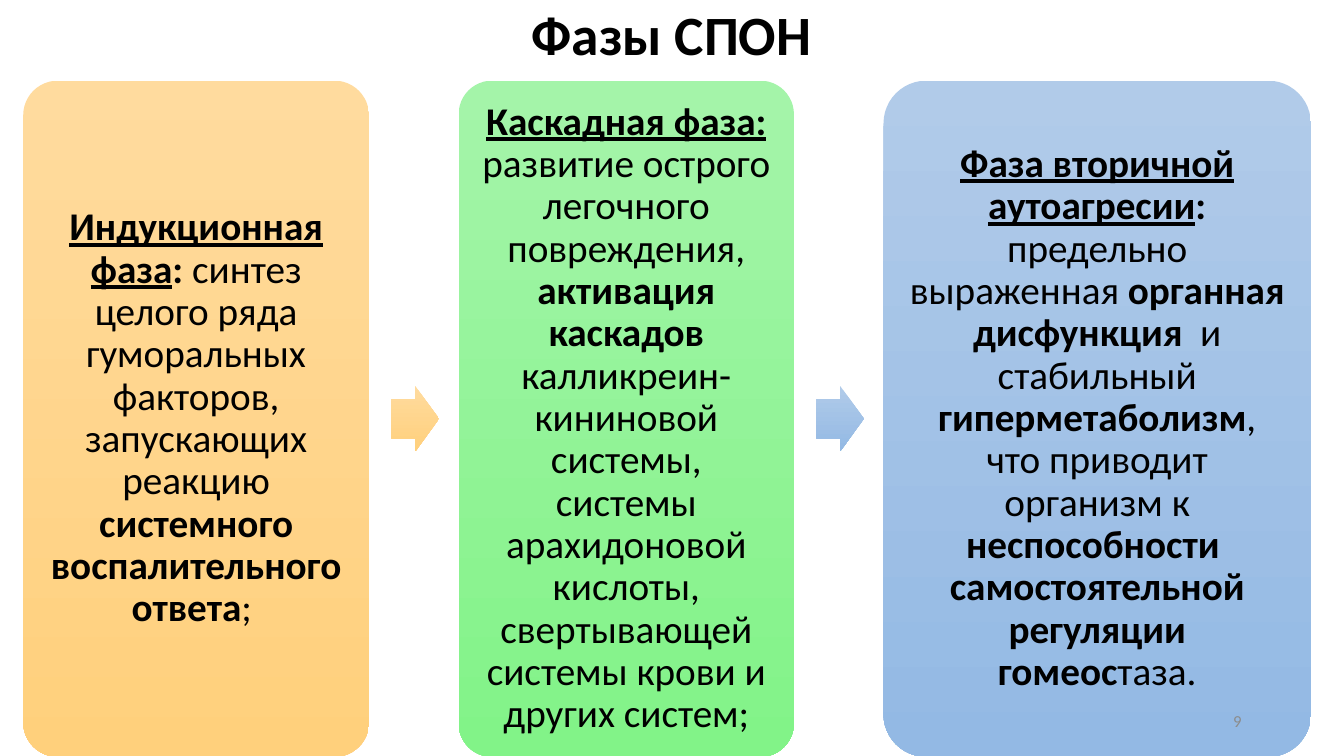
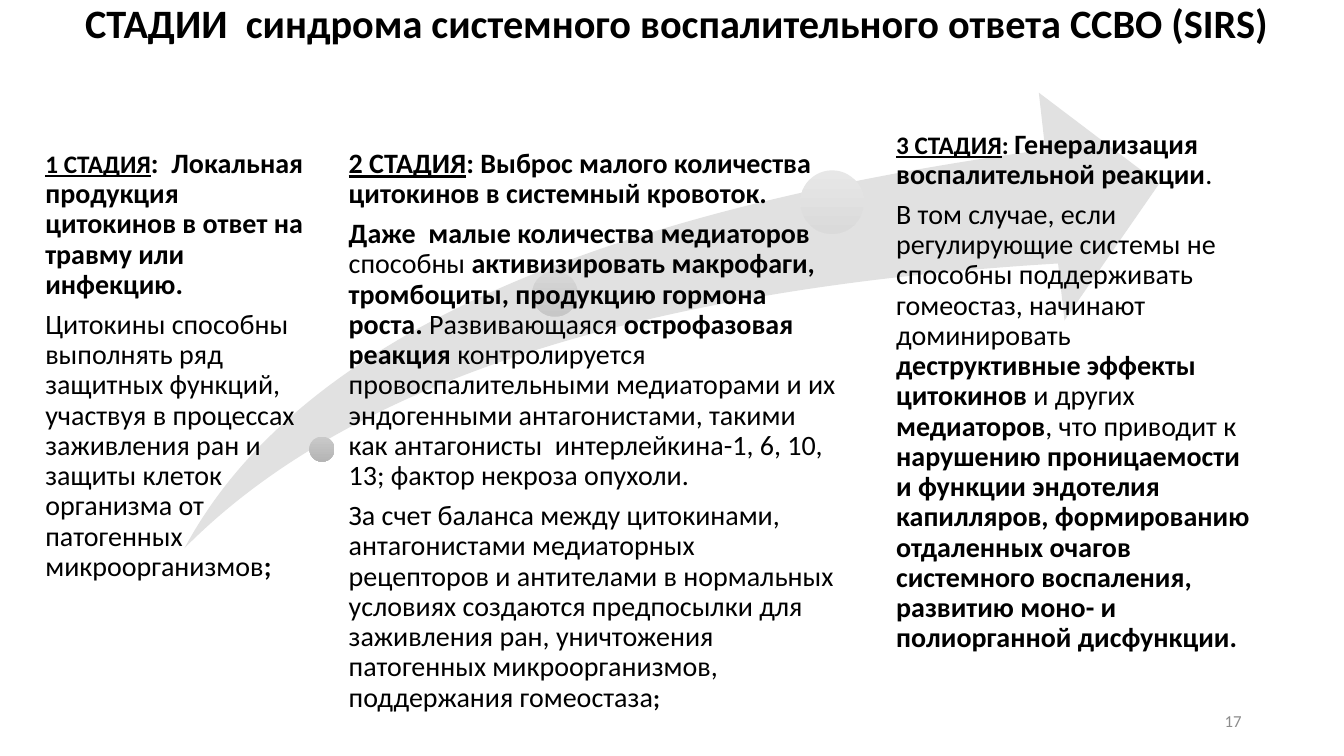
"""Build two slides on the phases and stages of the systemic inflammatory response."""
from dataclasses import dataclass

from pptx import Presentation
from pptx import util as u
from pptx.dml.color import RGBColor
from pptx.enum import shapes, text

Pt = u.Pt
Shape = shapes.MSO_SHAPE
Align = text.PP_ALIGN
Anchor = text.MSO_ANCHOR


@dataclass(frozen=True)
class Theme:
    font: str = "Calibri"
    ink: str = "000000"
    muted: str = "8C8C8C"
    swoosh: str = "E1E1E1"
    orange: tuple[str, str] = ("FFDB9E", "FFD07C")
    green: tuple[str, str] = ("A4F4A9", "82F388")
    blue: tuple[str, str] = ("B1CBE9", "93B9E4")
    grays: tuple[tuple[str, str], ...] = (
        ("C9C9C9", "B5B5B5"), ("D7D7D7", "C7C7C7"), ("E7E7E7", "DADADA"))
    phase_title: float = 39.6
    stage_title: float = 28.8
    phase_text: float = 28
    stage_text: float = 20
    stage_small: float = 18
    number: float = 12
    line_spacing: float = 0.9
    after: float = 0.35


THEME = Theme()


@dataclass(frozen=True)
class Box:
    left: float
    top: float
    width: float
    height: float

    def lengths(self) -> tuple:
        return Pt(self.left), Pt(self.top), Pt(self.width), Pt(self.height)


@dataclass(frozen=True)
class Run:
    text: str
    bold: bool = False
    underline: bool = False
    size: float | None = None


@dataclass(frozen=True)
class Phase:
    width: float
    colors: tuple[str, str]
    runs: list[Run]


@dataclass(frozen=True)
class Stage:
    dot: Box
    box: Box
    inset: float
    paragraphs: list[list[Run]]


PHASES = [
    Phase(247, THEME.orange, [
        Run("Индукционная фаза", True, True),
        Run(": ", True),
        Run("синтез целого ряда гуморальных факторов, запускающих реакцию "),
        Run("системного воспалительного ответа", True),
        Run("; "),
    ]),
    Phase(239.5, THEME.green, [
        Run("Каскадная фаза: ", True, True),
        Run("развитие острого легочного повреждения, "),
        Run("активация каскадов ", True),
        Run("калликреин-кининовой системы, системы арахидоновой кислоты, "
            "свертывающей системы крови и других систем;"),
    ]),
    Phase(305.3, THEME.blue, [
        Run("Фаза вторичной аутоагресии", True, True),
        Run(": ", True),
        Run("предельно выраженная "),
        Run("органная дисфункция", True),
        Run("  и стабильный "),
        Run("гиперметаболизм", True),
        Run(", что приводит организм к "),
        Run("неспособности  самостоятельной регуляции гомеос", True),
        Run("таза."),
    ]),
]

STAGES = [
    Stage(Box(221, 311.8, 18, 18), Box(23, 106.6, 197.3, 393), 9.4, [
        [
            Run("1 СТАДИЯ", True, True, THEME.stage_small),
            Run(":  Локальная продукция цитокинов в ответ на травму или инфекцию.", True),
        ],
        [
            Run("Цитокины способны выполнять ряд защитных функций, участвуя в процессах "
                "заживления ран и защиты клеток организма от патогенных микроорганизмов"),
            Run(";", True),
        ],
    ]),
    Stage(Box(380.2, 193.7, 32.4, 32.4), Box(231.8, 106.6, 366.5, 433.4), 17.3, [
        [
            Run("2 СТАДИЯ", True, True),
            Run(": Выброс малого количества цитокинов в системный кровоток.", True),
        ],
        [
            Run("Даже  малые количества медиаторов ", True),
            Run("способны "),
            Run("активизировать макрофаги, тромбоциты, продукцию гормона роста. ", True),
            Run("Развивающаяся "),
            Run("острофазовая реакция", True),
            Run(" контролируется провоспалительными медиаторами и их эндогенными "
                "антагонистами, такими как антагонисты  интерлейкина-1, 6, 10, 13; "
                "фактор некроза опухоли."),
        ],
        [
            Run("За счет баланса между цитокинами, антагонистами медиаторных рецепторов "
                "и антителами в нормальных условиях создаются предпосылки для заживления "
                "ран, уничтожения патогенных микроорганизмов, поддержания гомеостаза"),
            Run(";", True, size=THEME.stage_small),
        ],
    ]),
    Stage(Box(571.7, 121.7, 45.4, 45.4), Box(616.3, 92.9, 281.5, 404), 23.8, [
        [
            Run("3 СТАДИЯ", True, True, THEME.stage_small),
            Run(": ", True, size=THEME.stage_small),
            Run("Генерализация воспалительной реакции", True),
            Run("."),
        ],
        [
            Run("В том случае, если регулирующие системы не способны поддерживать "
                "гомеостаз, начинают доминировать "),
            Run("деструктивные эффекты цитокинов ", True),
            Run("и других "),
            Run("медиаторов", True),
            Run(", что приводит к "),
            Run("нарушению проницаемости и функции эндотелия капилляров, формированию "
                "отдаленных очагов системного воспаления, развитию моно- и "
                "полиорганной дисфункции.", True),
        ],
    ]),
]


def write(tf, paragraphs: list[list[Run]], size: float, color: str = THEME.ink,
          align=Align.LEFT, anchor=Anchor.TOP, spacing: float = THEME.line_spacing,
          insets: tuple[float, float, float, float] = (7.2, 3.6, 7.2, 3.6)) -> None:
    """Fill a text frame run by run."""
    tf.word_wrap = True
    tf.auto_size = text.MSO_AUTO_SIZE.NONE
    tf.vertical_anchor = anchor
    tf.margin_left, tf.margin_top, tf.margin_right, tf.margin_bottom = map(Pt, insets)
    for i, runs in enumerate(paragraphs):
        p = tf.add_paragraph() if i else tf.paragraphs[0]
        p.alignment = align
        p.line_spacing = spacing
        p.space_before = Pt(0)
        if len(paragraphs) > 1:
            p.space_after = Pt(size * THEME.after)
        for run in runs:
            r = p.add_run()
            r.text = run.text
            r.font.name = THEME.font
            r.font.size = Pt(run.size or size)
            r.font.bold = run.bold
            r.font.underline = run.underline
            r.font.color.rgb = RGBColor.from_string(color)


def add_shape(slide, kind, box: Box, colors: tuple[str, ...],
              adjustments: tuple[float, ...] = ()):
    """Draw a borderless shape with a solid or top-to-bottom gradient fill."""
    sp = slide.shapes.add_shape(kind, *box.lengths())
    sp.shadow.inherit = False
    sp.line.fill.background()
    for i, value in enumerate(adjustments):
        sp.adjustments[i] = value
    if len(colors) == 1:
        sp.fill.solid()
        sp.fill.fore_color.rgb = RGBColor.from_string(colors[0])
    else:
        sp.fill.gradient()
        sp.fill.gradient_angle = 270
        for stop, color in zip(sp.fill.gradient_stops, colors):
            stop.color.rgb = RGBColor.from_string(color)
    return sp


def add_text(slide, box: Box, paragraphs: list[list[Run]], size: float, **style) -> None:
    """Add a text box with formatted paragraphs."""
    write(slide.shapes.add_textbox(*box.lengths()).text_frame, paragraphs, size, **style)


def add_slide(prs, title: str, box: Box, size: float):
    """Add a title-only slide and format its title."""
    slide = prs.slides.add_slide(prs.slide_layouts[5])
    sp = slide.shapes.title
    sp.left, sp.top, sp.width, sp.height = box.lengths()
    write(sp.text_frame, [[Run(title, True)]], size,
          align=Align.CENTER, anchor=Anchor.MIDDLE)
    return slide


def add_number(slide, number: int) -> None:
    """Write the page number at the lower right."""
    add_text(slide, Box(678, 500.5, 216, 28.8), [[Run(str(number))]], THEME.number,
             color=THEME.muted, align=Align.RIGHT, anchor=Anchor.MIDDLE, spacing=1.0)


def build_phases(prs) -> None:
    """Draw three phase cards joined by block arrows."""
    slide = add_slide(prs, "Фазы СПОН", Box(59, 0, 841.7, 54), THEME.phase_title)
    top, height = 57.6, 483
    arrow_width, arrow_height = 34, 46.8
    gap_before, gap_after = 16, 14
    left = 16.6
    arrow_colors = (THEME.orange, THEME.blue)
    for i, phase in enumerate(PHASES):
        if i:
            left += gap_before
            arrow_top = top + (height - arrow_height) / 2
            add_shape(slide, Shape.RIGHT_ARROW,
                      Box(left, arrow_top, arrow_width, arrow_height),
                      arrow_colors[i - 1], (0.6, 0.5))
            left += arrow_width + gap_after
        card = add_shape(slide, Shape.ROUNDED_RECTANGLE,
                         Box(left, top, phase.width, height), phase.colors, (0.1,))
        write(card.text_frame, [phase.runs], THEME.phase_text, align=Align.CENTER,
              anchor=Anchor.MIDDLE, insets=(8.4,) * 4)
        left += phase.width
    add_number(slide, 9)


def build_stages(prs) -> None:
    """Draw three stages along a rising swoosh arrow."""
    slide = add_slide(prs, "СТАДИИ  синдрома системного воспалительного ответа ССВО (SIRS)",
                      Box(32.4, 0, 902.2, 36), THEME.stage_title)
    add_shape(slide, Shape.SWOOSH_ARROW, Box(131.8, 66.2, 696.2, 325.4),
              (THEME.swoosh,), (0.25, 0.25))
    for stage, colors in zip(STAGES, THEME.grays):
        add_shape(slide, Shape.OVAL, stage.dot, colors)
        add_text(slide, stage.box, stage.paragraphs, THEME.stage_text,
                 insets=(stage.inset, 0, 0, 0))
    add_number(slide, 17)


def main() -> None:
    """Build and save the presentation."""
    prs = Presentation()
    prs.slide_width, prs.slide_height = Pt(960), Pt(540)
    build_phases(prs)
    build_stages(prs)
    prs.save("out.pptx")


if __name__ == "__main__":
    main()
